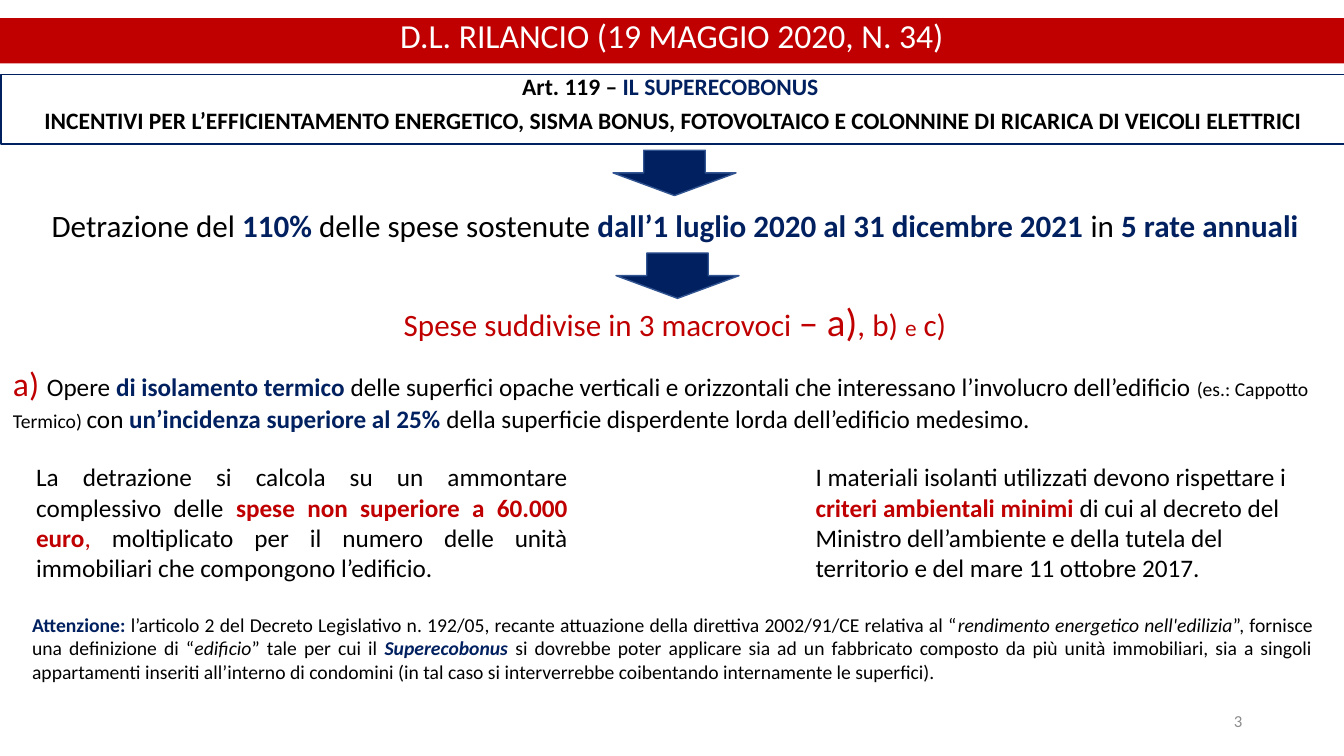
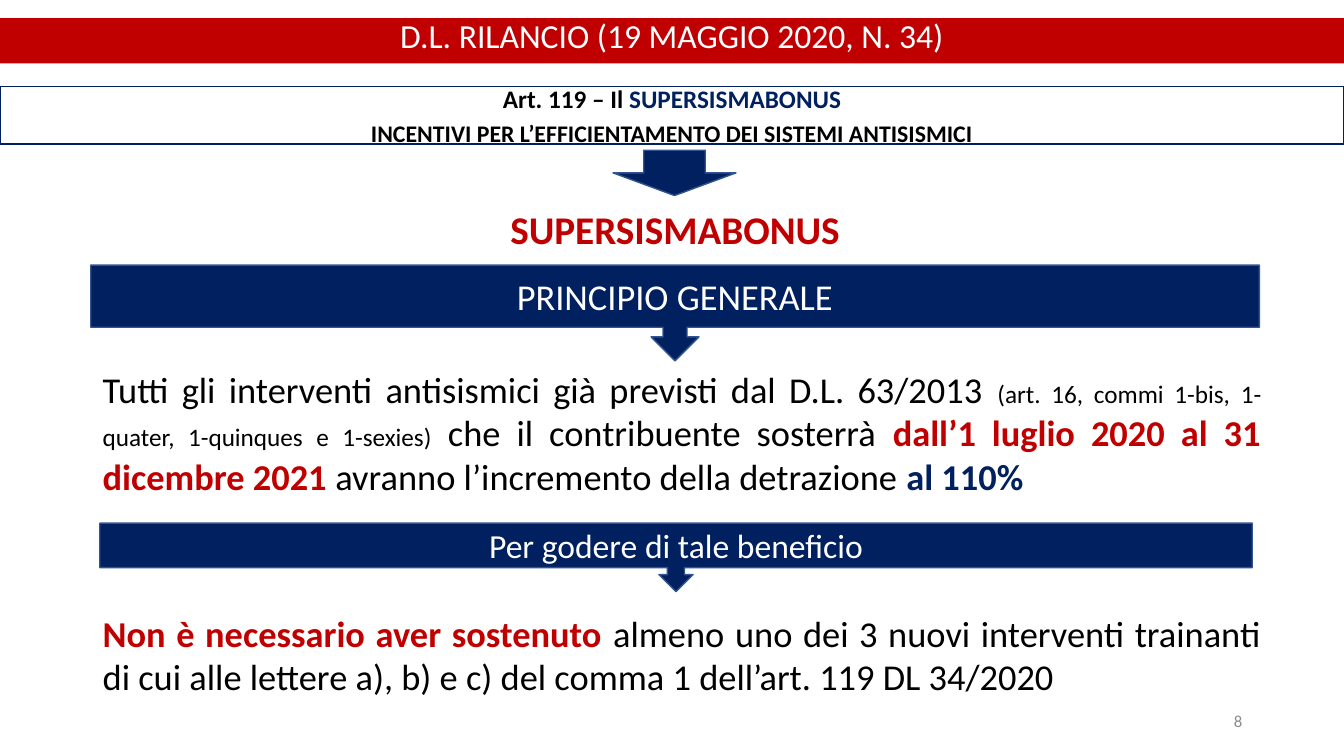
"""Build two slides on the Superecobonus and the Supersismabonus."""
from typing import NamedTuple

from pptx import Presentation
from pptx import util as u
from pptx.dml.color import RGBColor
from pptx.enum import shapes, text

PX = 9144
FONT = "Calibri"
RED = RGBColor(0xC0, 0x00, 0x00)
NAVY = RGBColor(0x00, 0x20, 0x60)
OUTLINE = RGBColor(0x32, 0x54, 0x91)
GRAY = RGBColor(0x8C, 0x8C, 0x8C)
BLACK = RGBColor(0x00, 0x00, 0x00)
WHITE = RGBColor(0xFF, 0xFF, 0xFF)

BOLD = {"bold": True}
NAVY_BOLD = {"color": NAVY, "bold": True}
RED_BOLD = {"color": RED, "bold": True}
ITALIC = {"italic": True}

JUSTIFIED = {"alignment": text.PP_ALIGN.JUSTIFY}
CENTERED = {"alignment": text.PP_ALIGN.CENTER}
RIGHT = {"alignment": text.PP_ALIGN.RIGHT}
SPACED = {**CENTERED, "space_before": u.Pt(10)}
TITLE_LINE = {**SPACED, "line_spacing": 0.8}
TIGHT = {**SPACED, "line_spacing": 0.7}
LEAD = {**SPACED, "line_spacing": 0.9}

TITLE = "D.L. RILANCIO (19 MAGGIO 2020, N. 34)"


class Box(NamedTuple):
    """A rectangle in px."""
    left: int
    top: int
    width: int
    height: int

    def inner(self, left, top, width, height):
        """Return a box placed relative to this one."""
        return Box(self.left + left, self.top + top, width, height)

    def emu(self):
        """Return the four lengths in EMU."""
        return [u.Emu(length * PX) for length in self]


PAGE = Box(0, 0, 1333, 750)


def write(shape, paragraphs, size, layout=None, color=BLACK,
          anchor=text.MSO_ANCHOR.TOP):
    """Fill a shape with paragraphs made of (text, format) runs."""
    frame = shape.text_frame
    frame.word_wrap = True
    frame.vertical_anchor = anchor
    for index, runs in enumerate(paragraphs):
        paragraph = frame.add_paragraph() if index else frame.paragraphs[0]
        for name, value in (layout or {}).items():
            setattr(paragraph, name, value)
        for words, changes in runs:
            run = paragraph.add_run()
            run.text = words
            values = {"name": FONT, "size": size, "color": color, **changes}
            run.font.color.rgb = values.pop("color")
            values["size"] = u.Pt(values["size"])
            for name, value in values.items():
                setattr(run.font, name, value)


def add_text(slide, box, runs, size, layout=None, **options):
    """Add a text box with one paragraph."""
    write(slide.shapes.add_textbox(*box.emu()), [runs], size, layout, **options)


def add_block(slide, box, kind, fill, line=None):
    """Add a filled preset shape, outlined if a line colour is given."""
    shape = slide.shapes.add_shape(kind, *box.emu())
    shape.shadow.inherit = False
    shape.fill.solid()
    shape.fill.fore_color.rgb = fill
    if line is None:
        shape.line.fill.background()
    else:
        shape.line.color.rgb = line
        shape.line.width = u.Pt(1)
    return shape


def add_arrow(slide, box):
    """Add a navy arrow pointing down."""
    add_block(slide, box, shapes.MSO_SHAPE.DOWN_ARROW, NAVY, OUTLINE)


def add_callout(slide, box, words, size):
    """Add a navy banner with an arrow below it."""
    callout = add_block(slide, box, shapes.MSO_SHAPE.DOWN_ARROW_CALLOUT, NAVY, OUTLINE)
    write(callout, [[(words, {})]], size, CENTERED, color=WHITE,
          anchor=text.MSO_ANCHOR.MIDDLE)


def add_frame(slide, page, number, article_box, article, size):
    """Add the title band, article box, first arrow and slide number."""
    band = add_block(slide, page.inner(0, 18, page.width, 45),
                     shapes.MSO_SHAPE.RECTANGLE, RED)
    write(band, [[(TITLE, {})]], 24, TITLE_LINE, color=WHITE)
    heading = add_block(slide, article_box, shapes.MSO_SHAPE.RECTANGLE, WHITE, NAVY)
    write(heading, article, size, TIGHT)
    add_arrow(slide, page.inner(608, 149, 122, 45))
    add_text(slide, page.inner(942, 695, 300, 40), [(str(number), {})], 12, RIGHT,
             color=GRAY, anchor=text.MSO_ANCHOR.MIDDLE)


def build_ecobonus(slide, page):
    """Build the slide on the energy bonus."""
    add_frame(slide, page, 3, page.inner(1, 74, page.width, 69), [
        [("Art. 119 – ", BOLD), ("IL SUPERECOBONUS ", NAVY_BOLD)],
        [("INCENTIVI PER L’EFFICIENTAMENTO ENERGETICO, SISMA BONUS, FOTOVOLTAICO "
          "E COLONNINE DI RICARICA DI VEICOLI ELETTRICI", BOLD)],
    ], 16.8)
    add_text(slide, page.inner(3, 204, page.width, 45), [
        ("Detrazione del ", {}),
        ("110%", NAVY_BOLD),
        (" delle spese sostenute ", {}),
        ("dall’1 luglio 2020 al 31 dicembre 2021 ", NAVY_BOLD),
        ("in ", {}),
        ("5 rate annuali", NAVY_BOLD),
    ], 22.2, LEAD)
    add_arrow(slide, page.inner(611, 251, 122, 45))
    add_text(slide, page.inner(3, 303, page.width, 45), [
        ("Spese suddivise in 3 macrovoci ", {}),
        ("– a)", {"size": 27.8}),
        (", b) ", {}),
        ("e", {"size": 16.6}),
        (" c)", {}),
    ], 22.2, TIGHT, color=RED)
    add_text(slide, page.inner(3, 355, 1331, 81), [
        ("a) ", {"size": 24, "color": RED}),
        ("Opere ", {}),
        ("di isolamento termico ", NAVY_BOLD),
        ("delle superfici opache verticali e orizzontali che interessano "
         "l’involucro dell’edificio ", {}),
        ("(es.: Cappotto Termico) ", {"size": 14}),
        ("con ", {}),
        ("un’incidenza superiore al 25% ", NAVY_BOLD),
        ("della superficie disperdente lorda dell’edificio medesimo.", {}),
    ], 18)
    add_text(slide, page.inner(26, 453, 547, 131), [
        ("La detrazione si calcola su un ammontare complessivo delle ", {}),
        ("spese non superiore a 60.000 euro", RED_BOLD),
        (", ", {"color": RED}),
        ("moltiplicato per il numero delle unità immobiliari che compongono "
         "l’edificio.", {}),
    ], 18, JUSTIFIED)
    add_text(slide, page.inner(799, 453, 491, 131), [
        ("I materiali isolanti utilizzati devono rispettare i ", {}),
        ("criteri ambientali minimi ", RED_BOLD),
        ("di cui al decreto del Ministro dell’ambiente e della tutela del "
         "territorio e del mare 11 ottobre 2017.", {}),
    ], 18)
    add_text(slide, page.inner(22, 603, 1290, 81), [
        ("Attenzione: ", NAVY_BOLD),
        ("l’articolo 2 del Decreto Legislativo n. 192/05, recante attuazione "
         "della direttiva 2002/91/CE relativa al “", {}),
        ("rendimento energetico nell'edilizia", ITALIC),
        ("”, fornisce una definizione di “", {}),
        ("edificio", ITALIC),
        ("” tale per cui il ", {}),
        ("Superecobonus ", {**NAVY_BOLD, **ITALIC}),
        ("si dovrebbe poter applicare sia ad un fabbricato composto da più unità "
         "immobiliari, sia a singoli appartamenti inseriti all’interno di "
         "condomini (in tal caso si interverrebbe coibentando internamente le "
         "superfici).", {}),
    ], 14, JUSTIFIED)


def build_sismabonus(slide, page):
    """Build the slide on the earthquake bonus."""
    add_frame(slide, page, 8, page.inner(0, 86, page.width, 57), [
        [("Art. 119 – Il ", BOLD), ("SUPERSISMABONUS", NAVY_BOLD)],
        [("INCENTIVI PER L’EFFICIENTAMENTO DEI SISTEMI ANTISISMICI",
          {**BOLD, "size": 17})],
    ], 18)
    add_text(slide, page.inner(3, 204, page.width, 45),
             [("SUPERSISMABONUS", RED_BOLD)], 28, LEAD)
    add_callout(slide, page.inner(90, 263, 1159, 95), "PRINCIPIO GENERALE", 26)
    add_text(slide, page.inner(92, 359, 1169, 141), [
        ("Tutti gli interventi antisismici già previsti dal D.L. 63/2013 ", {}),
        ("(art. 16, commi 1-bis, 1-quater, 1-quinques e 1-sexies)", {"size": 18}),
        (" che il contribuente sosterrà ", {}),
        ("dall’1 luglio 2020 al 31 dicembre 2021 ", RED_BOLD),
        ("avranno l’incremento della detrazione ", {}),
        ("al 110%", NAVY_BOLD),
    ], 26, JUSTIFIED)
    add_callout(slide, page.inner(99, 519, 1143, 68), "Per godere di tale beneficio", 24)
    add_text(slide, page.inner(92, 601, 1169, 98), [
        ("Non è necessario aver sostenuto ", RED_BOLD),
        ("almeno uno dei 3 nuovi interventi trainanti di cui alle lettere a), b) "
         "e c) del comma 1 dell’art. 119 DL 34/2020", {}),
    ], 26, JUSTIFIED)


def main():
    """Build and save the presentation."""
    presentation = Presentation()
    presentation.slide_width = u.Emu(PAGE.width * PX)
    presentation.slide_height = u.Emu(PAGE.height * PX)
    for build in (build_ecobonus, build_sismabonus):
        build(presentation.slides.add_slide(presentation.slide_layouts[6]), PAGE)
    presentation.save("out.pptx")


if __name__ == "__main__":
    main()
